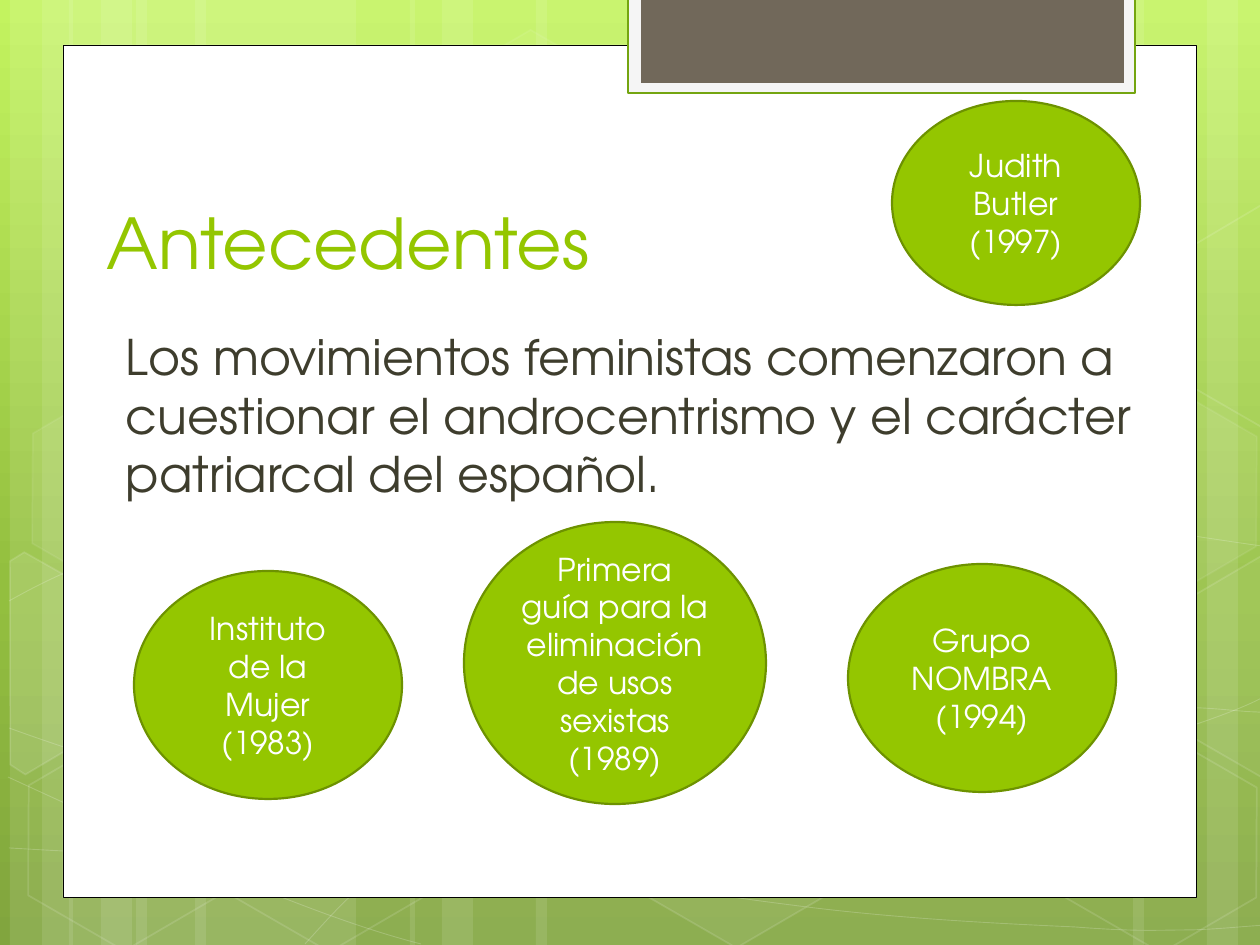
from copy import deepcopy
from dataclasses import dataclass
from math import cos, radians, sin
from typing import Optional

from lxml import etree
from pptx import Presentation
from pptx.dml.color import RGBColor
from pptx.enum.shapes import MSO_SHAPE
from pptx.enum.text import MSO_ANCHOR, PP_ALIGN
from pptx.oxml.ns import qn
from pptx.util import Emu, Pt

RECT, OVAL, HEXAGON = MSO_SHAPE.RECTANGLE, MSO_SHAPE.OVAL, MSO_SHAPE.HEXAGON
TOP, MIDDLE, BOTTOM = MSO_ANCHOR.TOP, MSO_ANCHOR.MIDDLE, MSO_ANCHOR.BOTTOM
LEFT, CENTER = PP_ALIGN.LEFT, PP_ALIGN.CENTER
SCALE = 914400 / 126
WIDTH, HEIGHT = 1260, 945
TILT = 30
FONT = "TeX Gyre Adventor"
COLORS = {
    "white": "FFFFFF", "black": "000000", "green": "94C600", "outline": "6D9200",
    "tab": "F5F5F5", "tab_line": "74A510", "brown": "71685A", "text": "3E3D2D",
    "lime": "C3F35F", "leaf": "93BF3F", "moss": "81A53E",
}
BACKGROUND = [(0, "lime"), (0.62, "leaf"), (1, "moss")]


@dataclass
class Paint:
    fill: Optional[str] = None
    fill_alpha: int = 100
    line: Optional[str] = None
    line_width: float = 1
    line_alpha: int = 100


@dataclass
class Bands:
    edge: int
    wide: int
    direction: int


@dataclass
class Hexagon:
    x: int
    y: int
    fill_alpha: int
    line_alpha: int


@dataclass
class CutHexagon:
    center: tuple
    points: list
    fill_alpha: int


@dataclass
class Bubble:
    x: int
    y: int
    w: int
    h: int
    lines: list


BANDS = [Bands(10, 220, 1), Bands(69, 220, 1), Bands(1270, 220, -1), Bands(410, 388, 1)]
WAVES = [
    [(9, 848), (77, 852), (145, 856), (239, 854), (334, 853), (451, 851), (577, 838),
     (703, 825), (882, 800), (998, 777), (1113, 753), (1231, 717), (1269, 694)],
    [(9, 601), (45, 581), (82, 562), (152, 543), (224, 524), (326, 496), (437, 488),
     (549, 479), (685, 478), (824, 488), (963, 498), (1193, 537), (1269, 547)],
    [(8, 777), (160, 847), (311, 916), (421, 944)],
    [(9, 728), (48, 742), (88, 756), (161, 776), (234, 795), (344, 827), (450, 848),
     (554, 869), (687, 892), (791, 905), (896, 919), (1008, 924), (1075, 927),
     (1140, 932), (1158, 930), (1191, 930), (1223, 929), (1246, 926), (1269, 925)],
    [(305, 944), (328, 919), (350, 893), (381, 871), (411, 848), (454, 823), (489, 805),
     (524, 788), (546, 780), (592, 767), (638, 754), (722, 737), (766, 728),
     (811, 719), (818, 719), (857, 717), (896, 713), (958, 709), (1000, 708),
     (1045, 707), (1116, 708), (1116, 708), (1116, 708), (1201, 708), (1201, 708),
     (1223, 709), (1245, 712), (1256, 712), (1268, 713), (1264, 712), (1268, 713)],
]
HEXAGONS = [
    Hexagon(421, 45, 4, 8), Hexagon(626, 742, 6, 12), Hexagon(14, 745, 0, 12),
    Hexagon(18, 393, 7, 8), Hexagon(219, 746, 0, 12), Hexagon(949, 571, 10, 12),
    Hexagon(1051, 747, 0, 12), Hexagon(1051, 396, 7, 8),
]
CUT_HEXAGONS = [
    CutHexagon((45, 674), [(10, 561), (24, 552), (121, 607), (120, 718),
                           (25, 774), (10, 765)], 10),
    CutHexagon((1241, 655), [(1167, 611), (1261, 556), (1271, 562), (1271, 772),
                             (1263, 777), (1167, 722)], 4),
    CutHexagon((1241, 304), [(1167, 261), (1261, 205), (1272, 212), (1271, 422),
                             (1263, 427), (1167, 372)], 0),
]
BUBBLES = [
    Bubble(134, 571, 268, 228, ["Instituto de la Mujer (1983)"]),
    Bubble(464, 522, 302, 282,
           ["Primera guía para la eliminación de usos sexistas", "(1989)"]),
    Bubble(848, 564, 268, 228, ["Grupo NOMBRA (1994)"]),
    Bubble(892, 101, 248, 204, ["Judith", "Butler (1997)"]),
]


def px(n: int) -> Emu:
    return Emu(round(n * SCALE))


def rgb(color: str) -> RGBColor:
    return RGBColor.from_string(COLORS[color])


def set_color(fill, color: str, alpha: int) -> None:
    fill.solid()
    fill.fore_color.rgb = rgb(color)
    if alpha < 100:
        node = fill.fore_color._xFill.find(qn("a:srgbClr"))
        etree.SubElement(node, qn("a:alpha"), val=str(alpha * 1000))


def paint_shape(sp, paint: Paint) -> None:
    sp.shadow.inherit = False
    if paint.fill and paint.fill_alpha:
        set_color(sp.fill, paint.fill, paint.fill_alpha)
    else:
        sp.fill.background()
    if paint.line:
        set_color(sp.line.fill, paint.line, paint.line_alpha)
        sp.line.width = Pt(paint.line_width)
    else:
        sp.line.fill.background()


def add_shape(s, kind, x: int, y: int, w: int, h: int, paint: Paint):
    sp = s.shapes.add_shape(kind, px(x), px(y), px(w), px(h))
    paint_shape(sp, paint)
    return sp


def add_path(s, points: list, close: bool, paint: Paint):
    builder = s.shapes.build_freeform(*points[0], scale=SCALE)
    builder.add_line_segments(points[1:], close=close)
    sp = builder.convert_to_shape()
    paint_shape(sp, paint)
    return sp


def add_wave(s, points: list) -> None:
    sp = add_path(s, points, False, Paint(line="white", line_width=0.5, line_alpha=20))
    path = sp._element.find(".//" + qn("a:path"))
    segments = path.findall(qn("a:lnTo"))
    for i in range(0, len(segments), 3):
        curve = etree.SubElement(path, qn("a:cubicBezTo"))
        for segment in segments[i:i + 3]:
            curve.append(segment[0])
            path.remove(segment)


def add_cut_hexagon(s, cut: CutHexagon) -> None:
    cx, cy = cut.center
    c, n = cos(radians(TILT)), sin(radians(TILT))
    points = [(cx + c * (x - cx) + n * (y - cy), cy - n * (x - cx) + c * (y - cy))
              for x, y in cut.points]
    sp = add_path(s, points, True, Paint("white", cut.fill_alpha, "white", 1, 12))
    sp.rotation = TILT


def write_text(sp, lines: list, size: int, color: str, anchor, align) -> None:
    tf = sp.text_frame
    tf.word_wrap = True
    tf.vertical_anchor = anchor
    tf.text = "\n".join(lines)
    for p in tf.paragraphs:
        p.alignment = align
        p.font.name = FONT
        p.font.size = Pt(size)
        p.font.color.rgb = rgb(color)


def add_background(s) -> None:
    fill = s.background.fill
    fill.gradient()
    fill.gradient_angle = 270
    stops = s.element.find(".//" + qn("a:gsLst"))
    stops.append(deepcopy(stops[-1]))
    for stop, (position, color) in zip(fill.gradient_stops, BACKGROUND):
        stop.position = position
        stop.color.rgb = rgb(color)


def add_decor(s) -> None:
    for band in BANDS:
        for offset, w in ((126, band.wide), (0, 63), (32, 105)):
            x = band.edge + offset if band.direction > 0 else band.edge - offset - w
            add_shape(s, RECT, x, 0, w, HEIGHT, Paint("white", 10))
    for wave in WAVES:
        add_wave(s, wave)
    for hexagon in HEXAGONS:
        sp = add_shape(s, HEXAGON, hexagon.x, hexagon.y, 220, 191,
                       Paint("white", hexagon.fill_alpha, "white", 1, hexagon.line_alpha))
        sp.adjustments[0] = 0.285
        sp.rotation = TILT
    for cut in CUT_HEXAGONS:
        add_cut_hexagon(s, cut)


def main() -> None:
    prs = Presentation()
    prs.slide_width, prs.slide_height = px(WIDTH), px(HEIGHT)
    s = prs.slides.add_slide(prs.slide_layouts[6])
    add_background(s)
    add_decor(s)
    add_shape(s, RECT, 63, 45, 1134, 853, Paint("white", line="black", line_width=0.5))
    add_shape(s, RECT, 628, -3, 507, 96, Paint("tab", line="tab_line", line_width=1.25))
    add_shape(s, RECT, 641, -3, 483, 86, Paint("brown"))

    title = s.shapes.add_textbox(px(94), px(83), px(566), px(207))
    write_text(title, ["Antecedentes"], 40, "green", BOTTOM, LEFT)
    body = s.shapes.add_textbox(px(105), px(320), px(1081), px(588))
    write_text(body, ["Los movimientos feministas comenzaron a cuestionar el androcentrismo "
                      "y el carácter patriarcal del español."], 28, "text", TOP, LEFT)
    body.text_frame.margin_left = px(21)
    body.text_frame.paragraphs[0].space_before = Pt(5.6)

    for bubble in BUBBLES:
        sp = add_shape(s, OVAL, bubble.x, bubble.y, bubble.w, bubble.h,
                       Paint("green", line="outline", line_width=1.25))
        write_text(sp, bubble.lines, 18, "white", MIDDLE, CENTER)
    prs.save("out.pptx")


if __name__ == "__main__":
    main()
